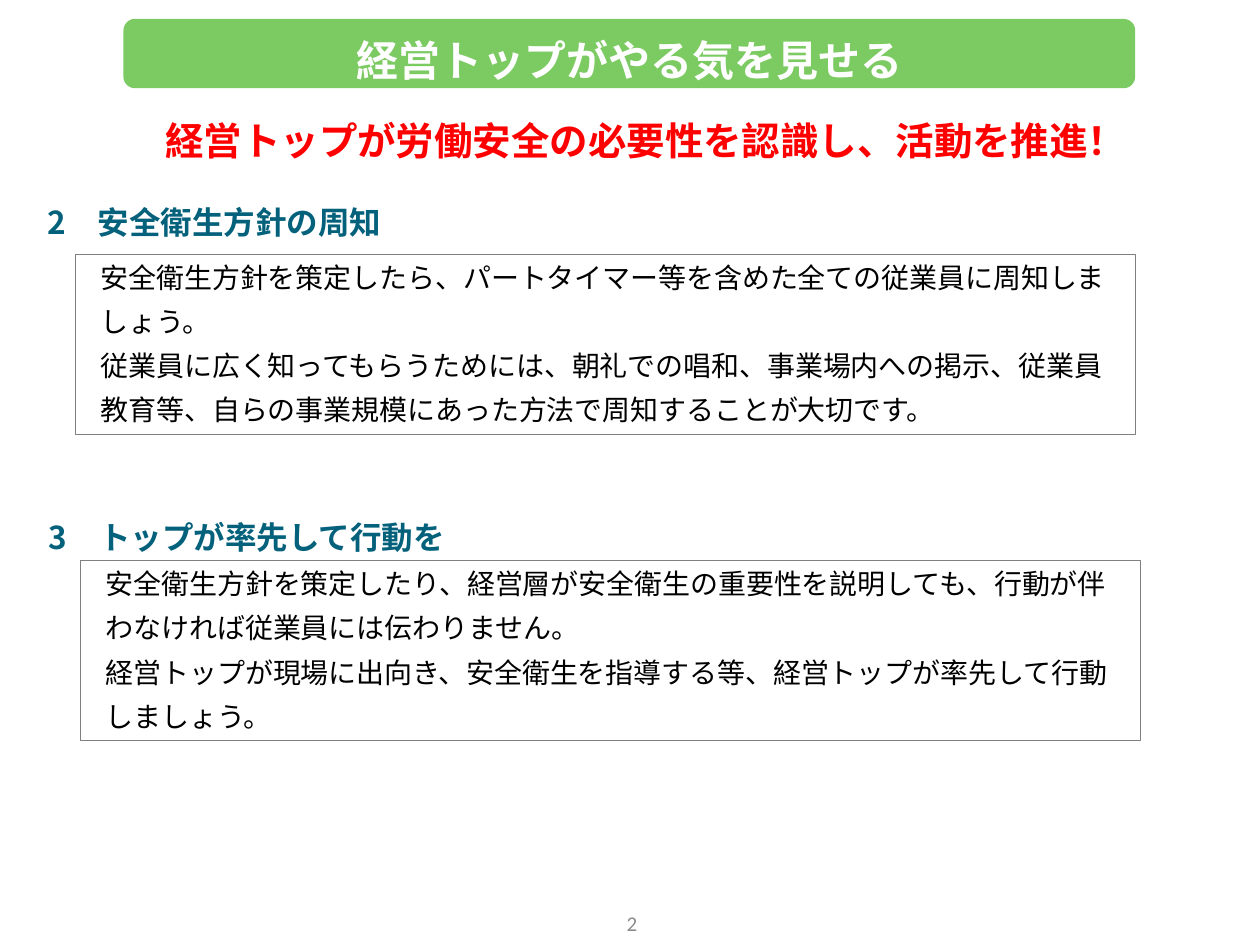
from dataclasses import dataclass

from lxml.etree import SubElement
from pptx import Presentation
from pptx.dml.color import RGBColor
from pptx.enum.shapes import MSO_SHAPE as Shape
from pptx.enum.text import MSO_ANCHOR as Anchor, MSO_AUTO_SIZE as AutoSize, PP_ALIGN as Align
from pptx.oxml.ns import qn
from pptx.util import Pt

JAPANESE = "Noto Sans CJK JP"
COLORS = {
    "banner": "7CCA62",
    "banner_text": "FFFFFF",
    "message": "FF0000",
    "heading": "04617B",
    "body": "000000",
    "border": "808080",
    "page_number": "8C8C8C",
}


@dataclass(frozen=True)
class Box:
    left: float
    top: float
    width: float
    height: float

    def lengths(self) -> tuple:
        return Pt(self.left), Pt(self.top), Pt(self.width), Pt(self.height)


@dataclass(frozen=True)
class Style:
    size: float
    color: str
    font: str = JAPANESE
    bold: bool = False
    align: Align = Align.CENTER
    anchor: Anchor = Anchor.MIDDLE
    margin: float = 0
    indent: float = 0
    line_spacing: float = 1.0
    space_before: float = 0


@dataclass(frozen=True)
class Section:
    heading: str
    heading_box: Box
    lines: tuple[str, ...]
    body_box: Box


BANNER = Style(24, "banner_text", font="Arial", bold=True, line_spacing=1.25)
MESSAGE = Style(22, "message", bold=True, margin=7.2)
HEADING = Style(18, "heading", bold=True, align=Align.JUSTIFY, anchor=Anchor.TOP,
                margin=28.8, indent=-28.8, line_spacing=1.5, space_before=6)
BODY = Style(16, "body", align=Align.JUSTIFY, anchor=Anchor.TOP,
             margin=28.8, indent=-21.6, space_before=6)
PAGE_NUMBER = Style(12, "page_number", font="Calibri")

SECTIONS = (
    Section(
        "2　安全衛生方針の周知",
        Box(20.16, 101.52, 436.32, 37.44),
        (
            "安全衛生方針を策定したら、パートタイマー等を含めた全ての従業員に周知しま",
            "しょう。",
            "従業員に広く知ってもらうためには、朝礼での唱和、事業場内への掲示、従業員",
            "教育等、自らの事業規模にあった方法で周知することが大切です。",
        ),
        Box(43.2, 145.44, 605.52, 102.96),
    ),
    Section(
        "3　トップが率先して行動を",
        Box(20.88, 281.52, 436.32, 37.44),
        (
            "安全衛生方針を策定したり、経営層が安全衛生の重要性を説明しても、行動が伴",
            "わなければ従業員には伝わりません。",
            "経営トップが現場に出向き、安全衛生を指導する等、経営トップが率先して行動",
            "しましょう。",
        ),
        Box(46.08, 320.4, 605.52, 102.96),
    ),
)


def color(name: str) -> RGBColor:
    return RGBColor.from_string(COLORS[name])


def write(shape, lines: tuple[str, ...], style: Style) -> None:
    """Fill the shape with one paragraph per line, all in the given style."""
    frame = shape.text_frame
    frame.word_wrap = True
    frame.auto_size = AutoSize.NONE
    frame.vertical_anchor = style.anchor
    frame.text = "\n".join(lines)
    for paragraph in frame.paragraphs:
        paragraph.alignment = style.align
        paragraph.line_spacing = style.line_spacing
        paragraph.space_before = Pt(style.space_before)
        font = paragraph.font
        font.size = Pt(style.size)
        font.bold = style.bold
        font.name = style.font
        font.color.rgb = color(style.color)
        properties = paragraph._p.get_or_add_pPr()
        properties.set("marL", str(Pt(style.margin)))
        properties.set("indent", str(Pt(style.indent)))
        defaults = properties.find(qn("a:defRPr"))
        SubElement(defaults, qn("a:ea")).set("typeface", JAPANESE)


def add_text(slide, box: Box, text: str, style: Style) -> None:
    write(slide.shapes.add_textbox(*box.lengths()), (text,), style)


def add_banner(slide, box: Box, text: str) -> None:
    banner = slide.shapes.add_shape(Shape.ROUNDED_RECTANGLE, *box.lengths())
    banner.shadow.inherit = False
    banner.fill.solid()
    banner.fill.fore_color.rgb = color("banner")
    banner.line.fill.background()
    write(banner, (text,), BANNER)


def add_section(slide, section: Section) -> None:
    add_text(slide, section.heading_box, section.heading, HEADING)
    body = slide.shapes.add_shape(Shape.RECTANGLE, *section.body_box.lengths())
    body.shadow.inherit = False
    body.fill.background()
    body.line.color.rgb = color("border")
    body.line.width = Pt(0.75)
    write(body, section.lines, BODY)


def main() -> None:
    presentation = Presentation()
    presentation.slide_width, presentation.slide_height = Pt(720), Pt(540)
    slide = presentation.slides.add_slide(presentation.slide_layouts[6])
    add_banner(slide, Box(70.56, 10.8, 578.16, 39.6), "経営トップがやる気を見せる")
    add_text(slide, Box(43.2, 63.36, 644.4, 33.84),
             "経営トップが労働安全の必要性を認識し、活動を推進！", MESSAGE)
    for section in SECTIONS:
        add_section(slide, section)
    add_text(slide, Box(277.2, 513.36, 167.76, 28.8), "2", PAGE_NUMBER)
    presentation.save("out.pptx")


if __name__ == "__main__":
    main()
